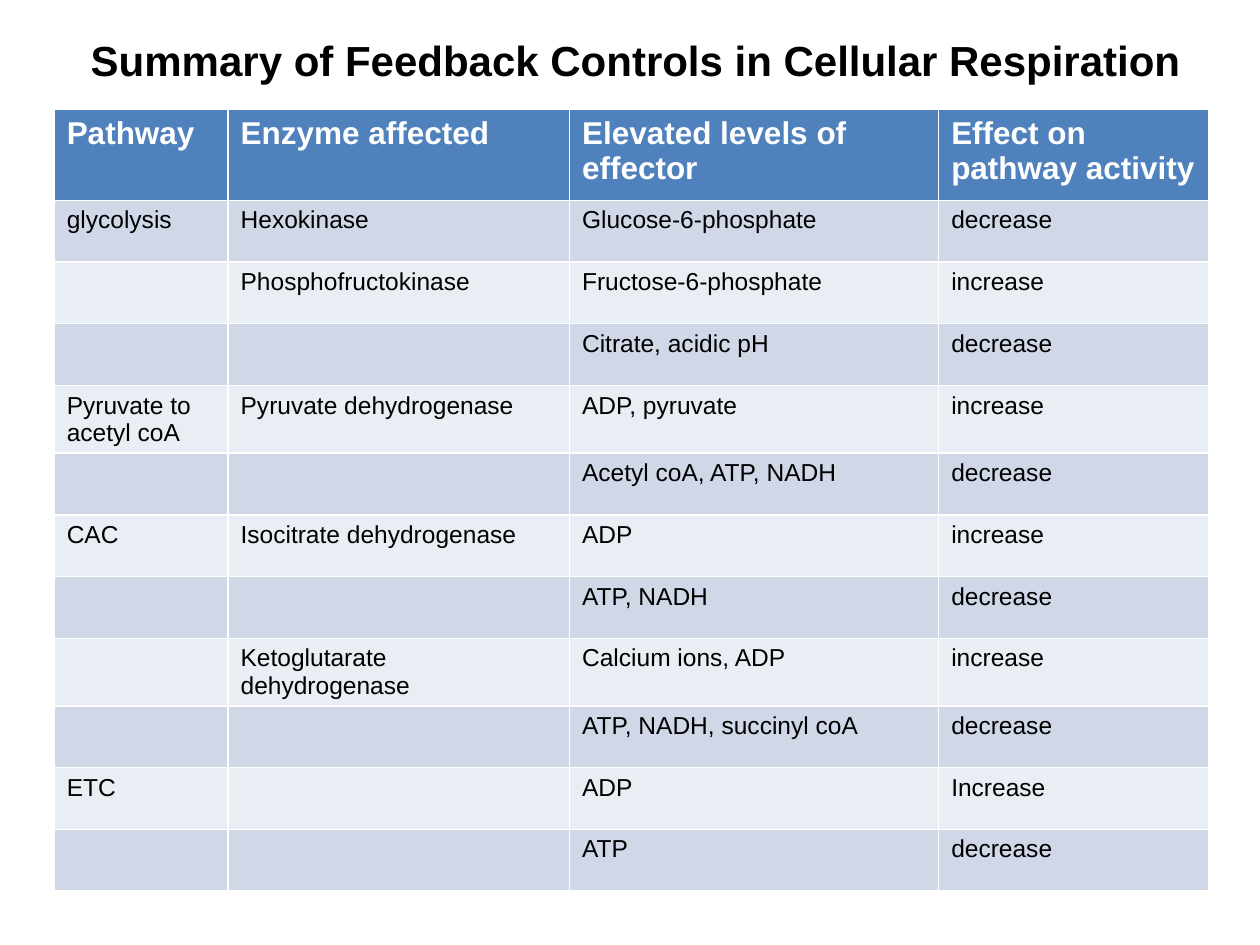
"""Build a slide that summarises the feedback controls in cellular respiration."""
from dataclasses import dataclass

from pptx import Presentation
from pptx.dml.color import RGBColor as Rgb
from pptx.enum.text import MSO_ANCHOR as Anchor, MSO_AUTO_SIZE as AutoSize, PP_ALIGN as Align
from pptx.util import Inches, Pt


@dataclass(frozen=True)
class Theme:
    font: str = "Arial"
    ink: Rgb = Rgb.from_string("000000")
    white: Rgb = Rgb.from_string("FFFFFF")
    header: Rgb = Rgb.from_string("4F81BD")
    bands: tuple = (Rgb.from_string("D0D8E8"), Rgb.from_string("E9EDF4"))
    title_size: int = 24
    header_size: int = 18
    body_size: int = 14


THEME = Theme()
TITLE = "Summary of Feedback Controls in Cellular Respiration"
COLUMN_WIDTHS = (1.38, 2.71, 2.93, 2.14)
HEADER_HEIGHT, ROW_HEIGHT = 0.72, 0.49
CONTROLS = (
    ("Pathway", "Enzyme affected", "Elevated levels of effector", "Effect on pathway activity"),
    ("glycolysis", "Hexokinase", "Glucose-6-phosphate", "decrease"),
    ("", "Phosphofructokinase", "Fructose-6-phosphate", "increase"),
    ("", "", "Citrate, acidic pH", "decrease"),
    ("Pyruvate to acetyl coA", "Pyruvate dehydrogenase", "ADP, pyruvate", "increase"),
    ("", "", "Acetyl coA, ATP, NADH", "decrease"),
    ("CAC", "Isocitrate dehydrogenase", "ADP", "increase"),
    ("", "", "ATP, NADH", "decrease"),
    ("", "Ketoglutarate dehydrogenase", "Calcium ions, ADP", "increase"),
    ("", "", "ATP, NADH, succinyl coA", "decrease"),
    ("ETC", "", "ADP", "Increase"),
    ("", "", "ATP", "decrease"),
)


def set_all(target, values):
    """Set each named attribute of the target."""
    for name, value in values.items():
        setattr(target, name, value)


def write(frame, text, size, color, bold):
    """Write one left-aligned paragraph into a text frame."""
    paragraph = frame.paragraphs[0]
    paragraph.alignment = Align.LEFT
    if not text:
        paragraph.font.size = Pt(size)
        return
    span = paragraph.add_run()
    span.text = text
    set_all(span.font, {"name": THEME.font, "size": Pt(size), "bold": bold})
    span.font.color.rgb = color


def place_title(page):
    """Move and format the title placeholder."""
    box = page.shapes.title
    set_all(box, {"left": Inches(0.62), "top": Inches(0.22),
                  "width": Inches(8.93), "height": Inches(0.5)})
    set_all(box.text_frame, {"word_wrap": True, "vertical_anchor": Anchor.TOP,
                             "auto_size": AutoSize.NONE})
    write(box.text_frame, TITLE, THEME.title_size, THEME.ink, True)


def fill_cell(cell, text, row_index):
    """Fill one cell as a header or as part of a banded row."""
    is_header = row_index == 0
    cell.fill.solid()
    cell.fill.fore_color.rgb = THEME.header if is_header else THEME.bands[(row_index - 1) % 2]
    size = THEME.header_size if is_header else THEME.body_size
    write(cell.text_frame, text, size, THEME.white if is_header else THEME.ink, is_header)


def add_controls_table(page):
    """Add the table of enzymes, effectors and effects."""
    heights = [HEADER_HEIGHT] + [ROW_HEIGHT] * (len(CONTROLS) - 1)
    table = page.shapes.add_table(
        len(CONTROLS), len(COLUMN_WIDTHS), Inches(0.43), Inches(0.87),
        Inches(sum(COLUMN_WIDTHS)), Inches(sum(heights))).table
    for column, width in zip(table.columns, COLUMN_WIDTHS):
        column.width = Inches(width)
    for row_index, (row, height, texts) in enumerate(zip(table.rows, heights, CONTROLS)):
        row.height = Inches(height)
        for cell, text in zip(row.cells, texts):
            fill_cell(cell, text, row_index)


def main():
    """Create the deck and save it."""
    deck = Presentation()
    set_all(deck, {"slide_width": Inches(10), "slide_height": Inches(7.5)})
    page = deck.slides.add_slide(deck.slide_layouts.get_by_name("Title Only"))
    place_title(page)
    add_controls_table(page)
    deck.save("out.pptx")


if __name__ == "__main__":
    main()
